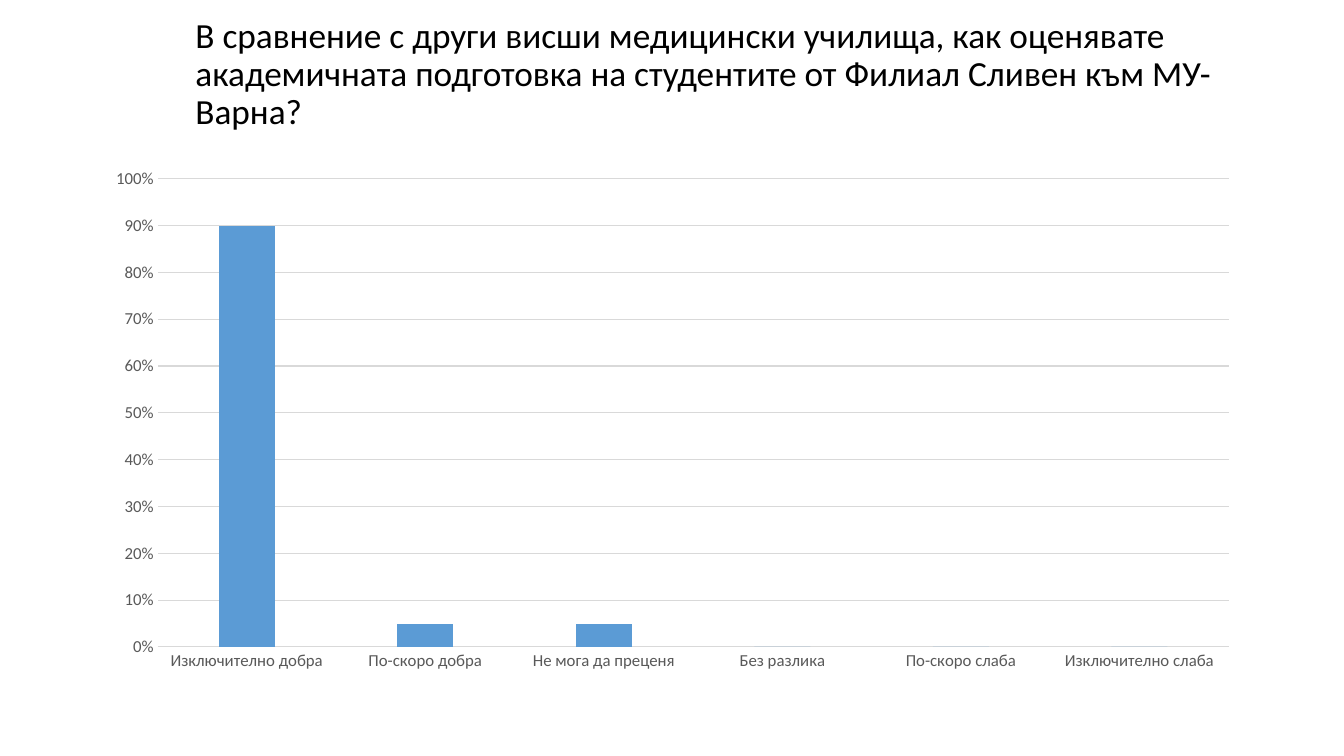
"""Build a survey slide with a title and a column chart."""
from dataclasses import dataclass

from pptx import Presentation
from pptx.chart.data import CategoryChartData
from pptx.dml.color import RGBColor
from pptx.enum.chart import XL_CHART_TYPE, XL_TICK_MARK
from pptx.enum.text import MSO_ANCHOR, MSO_AUTO_SIZE, PP_ALIGN
from pptx.util import Cm, Pt


@dataclass(frozen=True)
class Theme:
    """Hold the colours, font and type sizes of the slide."""
    font: str = "Calibri"
    text: RGBColor = RGBColor(0x00, 0x00, 0x00)
    label: RGBColor = RGBColor(0x59, 0x59, 0x59)
    grid: RGBColor = RGBColor(0xD9, 0xD9, 0xD9)
    bar: RGBColor = RGBColor(0x5B, 0x9B, 0xD5)
    title_size: Pt = Pt(25.2)
    label_size: Pt = Pt(12)
    line_width: Pt = Pt(0.75)


THEME = Theme()
QUESTION = ("В сравнение с други висши медицински училища, как оценявате "
            "академичната подготовка на студентите от Филиал Сливен към МУ-Варна?")
ANSWERS = {
    "Изключително добра": 0.9,
    "По-скоро добра": 0.05,
    "Не мога да преценя": 0.05,
    "Без разлика": 0,
    "По-скоро слаба": 0,
    "Изключително слаба": 0,
}


def set_attrs(obj, values):
    """Set each named attribute on an object."""
    for name, value in values.items():
        setattr(obj, name, value)


def format_font(font, size, color):
    """Apply the theme font in a size and colour."""
    set_attrs(font, {"name": THEME.font, "size": size, "bold": False})
    font.color.rgb = color


def format_line(line):
    """Draw a thin grey line."""
    line.color.rgb = THEME.grid
    line.width = THEME.line_width


def fill_title(sp, text, box):
    """Place the title placeholder and write its text."""
    set_attrs(sp, dict(zip(("left", "top", "width", "height"), box)))
    tf = sp.text_frame
    set_attrs(tf, {"word_wrap": True, "auto_size": MSO_AUTO_SIZE.NONE,
                   "vertical_anchor": MSO_ANCHOR.MIDDLE})
    p = tf.paragraphs[0]
    set_attrs(p, {"alignment": PP_ALIGN.LEFT, "line_spacing": 0.9})
    r = p.add_run()
    r.text = text
    format_font(r.font, THEME.title_size, THEME.text)


def format_axis(axis, values):
    """Apply the shared axis look and the given settings."""
    set_attrs(axis, {"major_tick_mark": XL_TICK_MARK.NONE,
                     "minor_tick_mark": XL_TICK_MARK.NONE, **values})
    format_font(axis.tick_labels.font, THEME.label_size, THEME.label)


def add_column_chart(s, answers, box):
    """Add a column chart of answer shares."""
    data = CategoryChartData(number_format="0%")
    data.categories = list(answers)
    data.add_series("Series 1", list(answers.values()))
    chart = s.shapes.add_chart(XL_CHART_TYPE.COLUMN_CLUSTERED, *box, data).chart
    set_attrs(chart, {"has_legend": False, "has_title": False})
    format_font(chart.font, THEME.label_size, THEME.label)

    plot = chart.plots[0]
    set_attrs(plot, {"gap_width": 219, "overlap": -27, "vary_by_categories": False})
    fill = plot.series[0].format.fill
    fill.solid()
    fill.fore_color.rgb = THEME.bar

    format_axis(chart.category_axis, {"has_major_gridlines": False})
    format_line(chart.category_axis.format.line)
    axis = chart.value_axis
    format_axis(axis, {"minimum_scale": 0, "maximum_scale": 1, "major_unit": 0.1,
                       "has_major_gridlines": True})
    set_attrs(axis.tick_labels, {"number_format": "0%",
                                 "number_format_is_linked": False})
    axis.format.line.fill.background()
    format_line(axis.major_gridlines.format.line)


def main():
    """Build and save the slide."""
    prs = Presentation()
    set_attrs(prs, {"slide_width": Cm(33.87), "slide_height": Cm(19.05)})
    s = prs.slides.add_slide(prs.slide_layouts[5])
    fill_title(s.shapes.title, QUESTION, (Cm(4.67), Cm(0.38), Cm(26.87), Cm(3.02)))
    add_column_chart(s, ANSWERS, (Cm(2.34), Cm(3.99), Cm(29.21), Cm(13.18)))
    prs.save("out.pptx")


if __name__ == "__main__":
    main()
